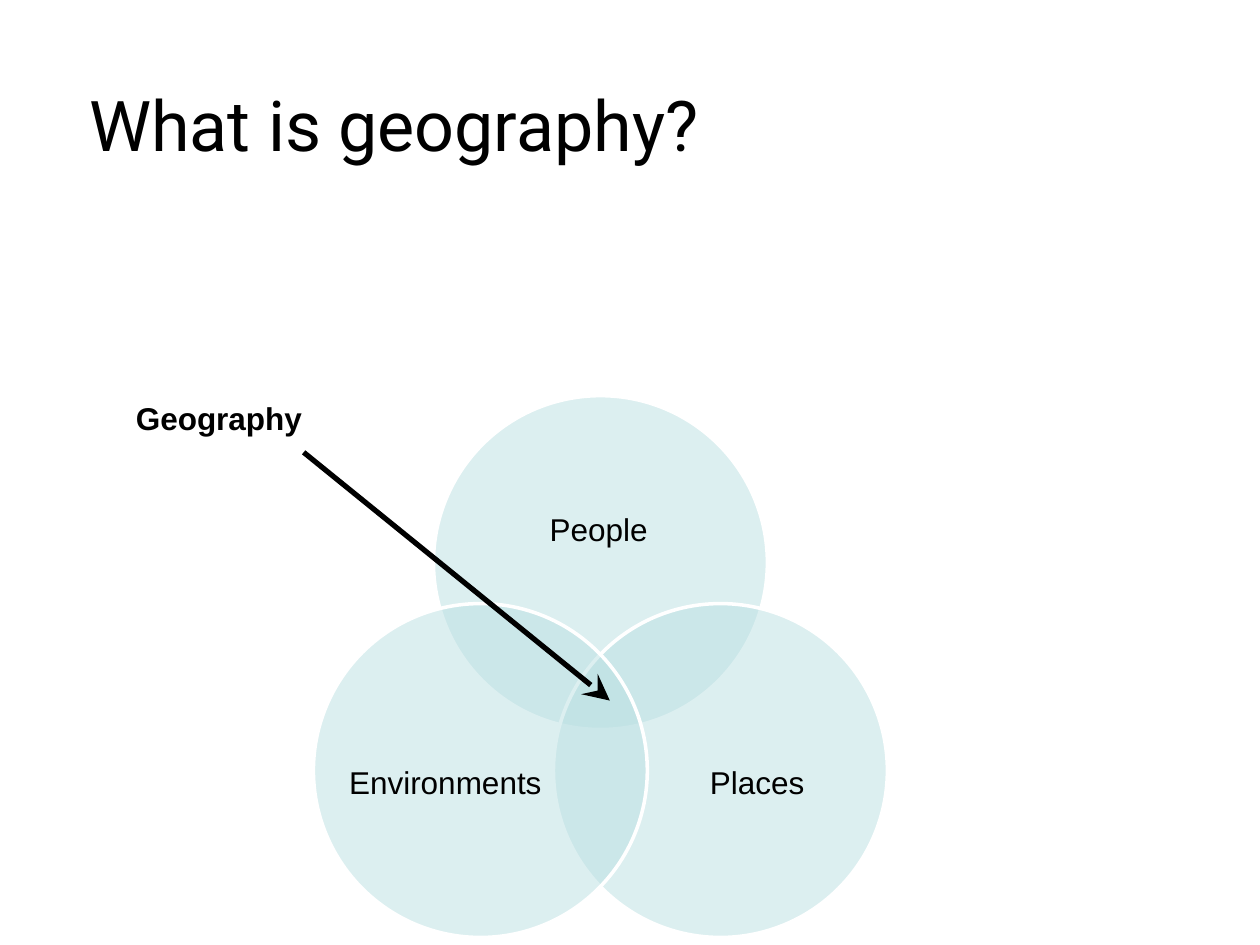
from math import cos, radians, sin

from lxml import etree
from pptx import Presentation
from pptx.dml.color import RGBColor
from pptx.enum.shapes import MSO_CONNECTOR, MSO_SHAPE
from pptx.enum.text import MSO_ANCHOR, PP_ALIGN
from pptx.oxml.ns import qn
from pptx.util import Inches, Pt

OVAL, LINE = MSO_SHAPE.OVAL, MSO_CONNECTOR.STRAIGHT
TOP, MIDDLE = MSO_ANCHOR.TOP, MSO_ANCHOR.MIDDLE
LEFT, CENTER = PP_ALIGN.LEFT, PP_ALIGN.CENTER

TITLE = "What is geography?"
CALLOUT = "Geography"
RINGS = [
    ("People", -90, (0.13, 0.175, 0.73, 0.45)),
    ("Places", 30, (0.31, 0.26, 0.6, 0.55)),
    ("Environments", 150, (0.095, 0.26, 0.6, 0.55)),
]
HUB, REACH, SIZE = (4.765, 5.565), 1.1, 2.65
ARROW = (2.41, 3.59, 4.84, 5.56)
BODY = {"name": "Arial", "size": Pt(18), "bold": False}
HEAD = {"name": "Roboto", "size": Pt(40), "bold": False}
BOLD = {**BODY, "bold": True}


def color(code):
    return RGBColor.from_string(code)


def label(slide, text, area, font, pads, align=LEFT, anchor=TOP, wrap=True):
    box = slide.shapes.add_textbox(*map(Inches, area))
    frame = box.text_frame
    sides = ("margin_left", "margin_top", "margin_right", "margin_bottom")
    for side, pad in zip(sides, pads):
        setattr(frame, side, Inches(pad))
    frame.word_wrap, frame.vertical_anchor = wrap, anchor
    para = frame.paragraphs[0]
    para.alignment = align
    run = para.add_run()
    run.text = text
    for key, value in font.items():
        setattr(run.font, key, value)
    run.font.color.rgb = color("000000")


def ring(slide, left, top):
    disc = slide.shapes.add_shape(OVAL, *map(Inches, (left, top, SIZE, SIZE)))
    disc.shadow.inherit = False
    disc.fill.solid()
    disc.fill.fore_color.rgb = color("BBE0E3")
    tint = disc.fill._xPr.find(".//" + qn("a:srgbClr"))
    etree.SubElement(tint, qn("a:alpha"), val="50000")
    disc.line.color.rgb = color("FFFFFF")
    disc.line.width = Pt(2)


def arrow(slide):
    link = slide.shapes.add_connector(LINE, *map(Inches, ARROW))
    link.line.color.rgb = color("000000")
    link.line.width = Pt(3)
    etree.SubElement(link.line._get_or_add_ln(), qn("a:tailEnd"),
                     type="stealth", w="lg", len="lg")
    etree.SubElement(link._element.spPr, qn("a:effectLst"))


def main():
    deck = Presentation()
    deck.slide_width, deck.slide_height = Inches(10), Inches(7.5)
    slide = deck.slides.add_slide(deck.slide_layouts[6])
    label(slide, TITLE, (0.51, 0.28, 7.1, 1.95), HEAD, (0.2, 0.37, 0.1, 0.05))
    for text, angle, (x, y, w, h) in RINGS:
        turn = radians(angle)
        left = HUB[0] + REACH * cos(turn) - SIZE / 2
        top = HUB[1] + REACH * sin(turn) - SIZE / 2
        ring(slide, left, top)
        area = (left + x * SIZE, top + y * SIZE, w * SIZE, h * SIZE)
        label(slide, text, area, BODY, (0, 0, 0, 0), CENTER, MIDDLE)
    arrow(slide)
    label(slide, CALLOUT, (0.98, 3.12, 1.52, 0.4), BOLD,
          (0.1, 0.05, 0.1, 0.05), wrap=False)
    deck.save("out.pptx")


if __name__ == "__main__":
    main()
